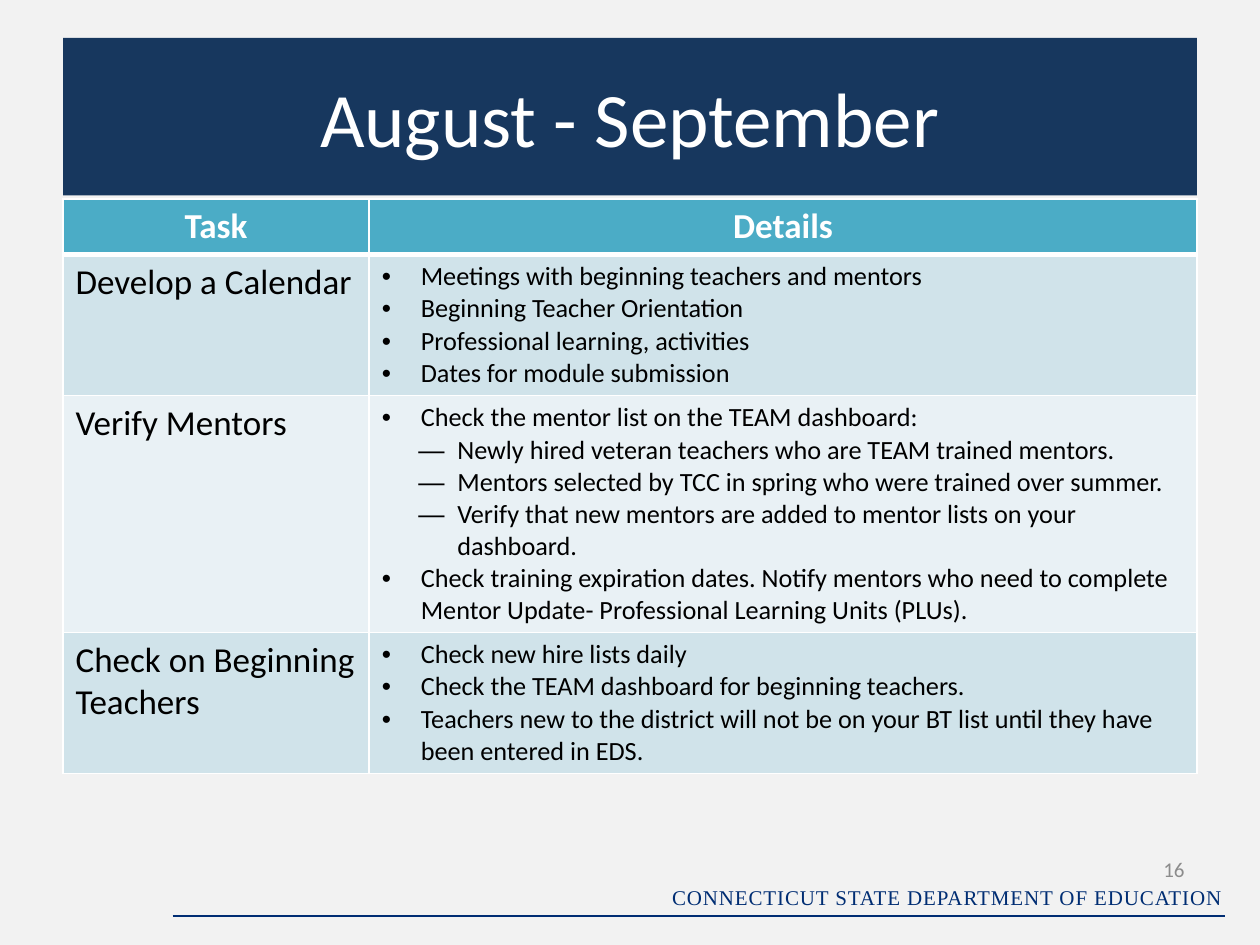
from dataclasses import dataclass

from lxml.etree import SubElement
from pptx import Presentation
from pptx.dml.color import RGBColor
from pptx.enum.shapes import MSO_CONNECTOR
from pptx.enum.text import MSO_ANCHOR, MSO_AUTO_SIZE, PP_ALIGN
from pptx.oxml.ns import qn
from pptx.util import Inches, Pt


@dataclass(frozen=True)
class Theme:
    background: str = "F2F2F2"
    navy: str = "17375E"
    footer: str = "002D73"
    gray: str = "8C8C8C"
    white: str = "FFFFFF"
    black: str = "000000"
    header: str = "4BACC6"
    bands: tuple = ("D0E3EA", "E9F1F5")
    body_font: str = "Calibri"
    footer_font: str = "Times New Roman"
    title_size: float = 44
    task_size: float = 20
    detail_size: float = 15
    small_size: float = 12


TASKS = [
    ("Develop a Calendar", 1.12, [
        (0, "Meetings with beginning teachers and mentors"),
        (0, "Beginning Teacher Orientation"),
        (0, "Professional learning, activities"),
        (0, "Dates for module submission"),
    ]),
    ("Verify Mentors", 1.88, [
        (0, "Check the mentor list on the TEAM dashboard:"),
        (1, "Newly hired veteran teachers who are TEAM trained mentors."),
        (1, "Mentors selected by TCC in spring who were trained over summer."),
        (1, "Verify that new mentors are added to mentor lists on your dashboard."),
        (0, "Check training expiration dates. Notify mentors who need to complete "
            "Mentor Update- Professional Learning Units (PLUs)."),
    ]),
    ("Check on Beginning Teachers", 1.12, [
        (0, "Check new hire lists daily"),
        (0, "Check the TEAM dashboard for beginning teachers."),
        (0, "Teachers new to the district will not be on your BT list until "
            "they have been entered in EDS."),
    ]),
]
BULLETS = [("•", 0.31), ("―", 0.6)]
HANGING = 0.31


class SlideBuilder:
    def __init__(self, page, theme):
        self.page = page
        self.theme = theme
        page.background.fill.solid()
        page.background.fill.fore_color.rgb = RGBColor.from_string(theme.background)

    def format(self, paragraph, size, color, align=PP_ALIGN.LEFT, bold=False,
               font=None, spacing=None):
        paragraph.alignment = align
        for span in paragraph.runs:
            span.font.name = font or self.theme.body_font
            span.font.size = Pt(size)
            span.font.bold = bold
            span.font.color.rgb = RGBColor.from_string(color)
            if spacing:
                span._r.get_or_add_rPr().set("spc", str(round(spacing * 100)))

    def title(self, text, left, top, width, height):
        title = self.page.shapes.title
        title.left, title.top = Inches(left), Inches(top)
        title.width, title.height = Inches(width), Inches(height)
        title.fill.solid()
        title.fill.fore_color.rgb = RGBColor.from_string(self.theme.navy)
        frame = title.text_frame
        frame.text = text
        frame.auto_size = MSO_AUTO_SIZE.NONE
        frame.vertical_anchor = MSO_ANCHOR.MIDDLE
        self.format(frame.paragraphs[0], self.theme.title_size, self.theme.white,
                    PP_ALIGN.CENTER)

    def line(self, left, right, y, color, weight):
        line = self.page.shapes.add_connector(
            MSO_CONNECTOR.STRAIGHT, Inches(left), Inches(y), Inches(right), Inches(y))
        line.line.color.rgb = RGBColor.from_string(color)
        line.line.width = Pt(weight)
        SubElement(line._element.spPr, qn("a:effectLst"))

    def text(self, text, left, top, width, height, color, anchor=MSO_ANCHOR.TOP, **style):
        box = self.page.shapes.add_textbox(
            Inches(left), Inches(top), Inches(width), Inches(height))
        frame = box.text_frame
        frame.word_wrap = True
        frame.vertical_anchor = anchor
        frame.text = text
        self.format(frame.paragraphs[0], self.theme.small_size, color,
                    PP_ALIGN.RIGHT, **style)

    def border(self, cell, side, weight):
        line = SubElement(cell._tc.get_or_add_tcPr(), qn(f"a:ln{side}"),
                          w=str(Pt(weight)))
        fill = SubElement(line, qn("a:solidFill"))
        SubElement(fill, qn("a:srgbClr"), val=self.theme.white)

    def paint_cell(self, cell, color, top=1, bottom=1):
        for side, weight in (("L", 1), ("R", 1), ("T", top), ("B", bottom)):
            self.border(cell, side, weight)
        cell.fill.solid()
        cell.fill.fore_color.rgb = RGBColor.from_string(color)

    def bullet(self, paragraph, level):
        symbol, margin = BULLETS[level]
        paragraph.level = level
        properties = paragraph._p.get_or_add_pPr()
        properties.set("marL", str(Inches(margin)))
        properties.set("indent", str(Inches(-HANGING)))
        SubElement(properties, qn("a:buFont"), typeface="Arial")
        SubElement(properties, qn("a:buChar"), char=symbol)

    def table(self, headings, tasks, left, top, widths, header_height):
        theme = self.theme
        heights = [header_height] + [height for _, height, _ in tasks]
        table = self.page.shapes.add_table(
            len(heights), len(widths), Inches(left), Inches(top),
            Inches(sum(widths)), Inches(sum(heights))).table
        for column, width in zip(table.columns, widths):
            column.width = Inches(width)
        for row, height in zip(table.rows, heights):
            row.height = Inches(height)
        for cell, heading in zip(table.rows[0].cells, headings):
            cell.text_frame.text = heading
            self.format(cell.text_frame.paragraphs[0], theme.task_size, theme.white,
                        PP_ALIGN.CENTER, bold=True)
            self.paint_cell(cell, theme.header, bottom=3)
        for index, (task, _, details) in enumerate(tasks):
            task_cell, detail_cell = table.rows[index + 1].cells
            task_cell.text_frame.text = task
            self.format(task_cell.text_frame.paragraphs[0], theme.task_size, theme.black)
            detail_cell.text_frame.text = "\n".join(text for _, text in details)
            for paragraph, (level, _) in zip(detail_cell.text_frame.paragraphs, details):
                self.format(paragraph, theme.detail_size, theme.black)
                self.bullet(paragraph, level)
            for cell in (task_cell, detail_cell):
                self.paint_cell(cell, theme.bands[index % 2], top=1 if index else 3)


def main():
    deck = Presentation()
    deck.slide_width, deck.slide_height = Inches(10), Inches(7.5)
    theme = Theme()
    builder = SlideBuilder(deck.slides.add_slide(deck.slide_layouts[5]), theme)
    builder.line(1.37, 9.72, 7.27, theme.footer, 0.75)
    builder.text("CONNECTICUT STATE DEPARTMENT OF EDUCATION", 5.18, 6.97, 4.62, 0.3,
                 theme.footer, font=theme.footer_font, spacing=0.5)
    builder.title("August - September", 0.5, 0.3, 9, 1.25)
    builder.text("16", 8.97, 6.7, 0.53, 0.4, theme.gray, MSO_ANCHOR.MIDDLE)
    builder.table(("Task", "Details"), TASKS, 0.5, 1.58, (2.43, 6.57), 0.44)
    deck.save("out.pptx")


if __name__ == "__main__":
    main()
